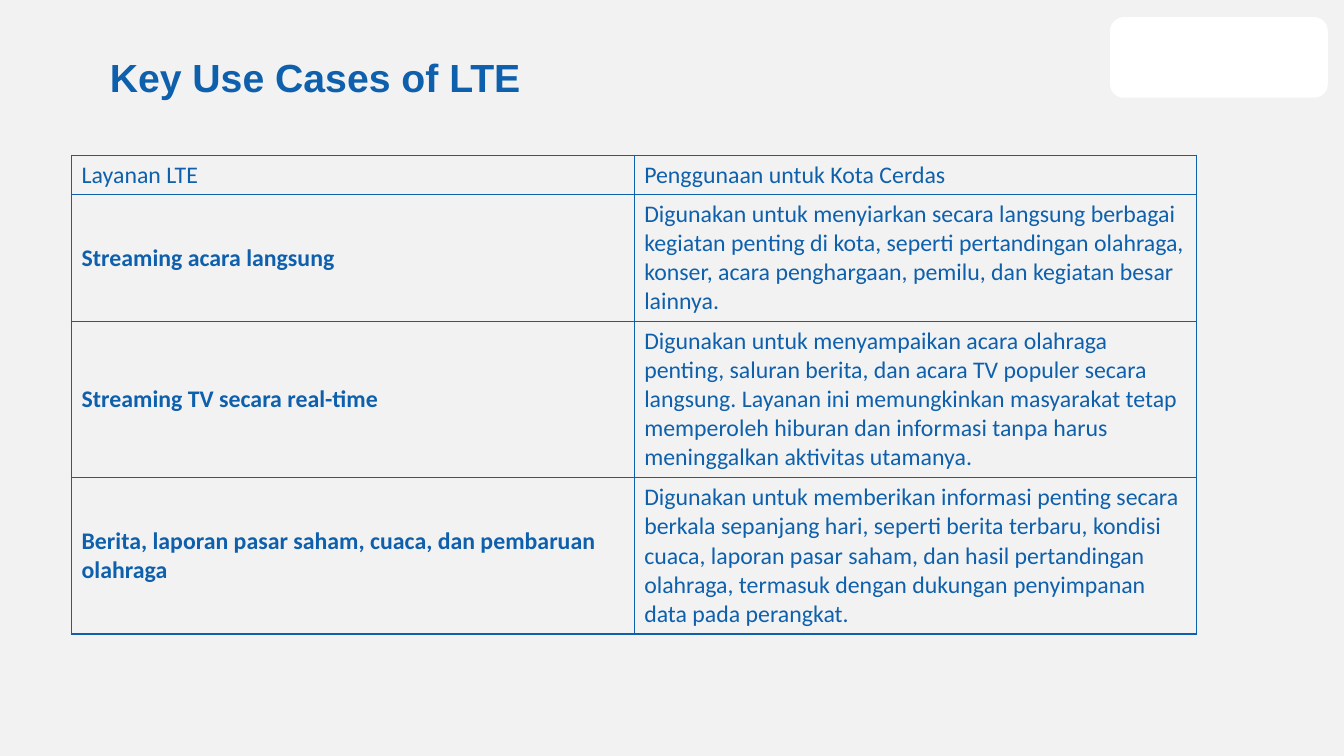
from lxml import etree
from pptx import Presentation
from pptx.dml.color import RGBColor
from pptx.enum.shapes import MSO_SHAPE
from pptx.enum.text import MSO_ANCHOR
from pptx.oxml.ns import qn
from pptx.util import Inches, Pt

RECT = MSO_SHAPE.RECTANGLE
ROUNDED = MSO_SHAPE.ROUNDED_RECTANGLE
TOP = MSO_ANCHOR.TOP
MIDDLE = MSO_ANCHOR.MIDDLE

BLUE = "0E60AC"
GREY = "F2F2F2"
WHITE = "FFFFFF"

COLUMN_WIDTH = 5.58
ROW_HEIGHTS = [0.39, 1.26, 1.55, 1.55]
USE_CASES = [
    ("Layanan LTE", "Penggunaan untuk Kota Cerdas"),
    ("Streaming acara langsung",
     "Digunakan untuk menyiarkan secara langsung berbagai kegiatan penting di "
     "kota, seperti pertandingan olahraga, konser, acara penghargaan, pemilu, "
     "dan kegiatan besar lainnya."),
    ("Streaming TV secara real-time",
     "Digunakan untuk menyampaikan acara olahraga penting, saluran berita, dan "
     "acara TV populer secara langsung. Layanan ini memungkinkan masyarakat "
     "tetap memperoleh hiburan dan informasi tanpa harus meninggalkan "
     "aktivitas utamanya."),
    ("Berita, laporan pasar saham, cuaca, dan pembaruan olahraga",
     "Digunakan untuk memberikan informasi penting secara berkala sepanjang "
     "hari, seperti berita terbaru, kondisi cuaca, laporan pasar saham, dan "
     "hasil pertandingan olahraga, termasuk dengan dukungan penyimpanan data "
     "pada perangkat."),
]


def rgb(color):
    return RGBColor.from_string(color)


def add_panel(s, kind, left, top, width, height, color):
    sp = s.shapes.add_shape(kind, Inches(left), Inches(top),
                            Inches(width), Inches(height))
    sp.shadow.inherit = False
    sp.fill.solid()
    sp.fill.fore_color.rgb = rgb(color)
    sp.line.fill.background()
    return sp


def format_text(p, font, size, bold):
    for r in p.runs:
        r.font.name = font
        r.font.size = Pt(size)
        r.font.bold = bold
        r.font.color.rgb = rgb(BLUE)


def add_title(s, text):
    sp = s.shapes.add_textbox(Inches(0.99), Inches(0.53),
                              Inches(10.18), Inches(0.71))
    tf = sp.text_frame
    tf.word_wrap = True
    tf.vertical_anchor = TOP
    tf.text = text
    p = tf.paragraphs[0]
    p.line_spacing = 0.9
    format_text(p, "Arial", 28, True)


def set_borders(cell, color, width):
    # Border lines come before the fill in the cell properties
    tc_pr = cell._tc.get_or_add_tcPr()
    for i, side in enumerate(("lnL", "lnR", "lnT", "lnB")):
        ln = etree.Element(qn(f"a:{side}"), w=str(Pt(width)))
        fill = etree.SubElement(ln, qn("a:solidFill"))
        etree.SubElement(fill, qn("a:srgbClr"), val=color)
        tc_pr.insert(i, ln)


def add_use_case_table(s):
    frame = s.shapes.add_table(len(USE_CASES), 2, Inches(0.71), Inches(1.54),
                               Inches(2 * COLUMN_WIDTH),
                               Inches(sum(ROW_HEIGHTS)))
    table = frame.table
    table.first_row = False
    table.horz_banding = False
    for column in table.columns:
        column.width = Inches(COLUMN_WIDTH)
    for i, (height, texts) in enumerate(zip(ROW_HEIGHTS, USE_CASES)):
        table.rows[i].height = Inches(height)
        for j, text in enumerate(texts):
            cell = table.cell(i, j)
            cell.text = text
            cell.vertical_anchor = MIDDLE
            cell.fill.background()
            set_borders(cell, BLUE, 1)
            # Service names below the header are bold
            format_text(cell.text_frame.paragraphs[0], "Calibri", 17,
                        i > 0 and j == 0)


def main():
    prs = Presentation()
    prs.slide_width = Inches(13.33)
    prs.slide_height = Inches(7.5)
    s = prs.slides.add_slide(prs.slide_layouts[6])

    # Backdrop and corner panel
    add_panel(s, RECT, 0, 0, 13.33, 7.5, GREY)
    corner = add_panel(s, ROUNDED, 11.01, 0.17, 2.16, 0.8, WHITE)
    corner.adjustments[0] = 0.17

    # Content
    add_title(s, "Key Use Cases of LTE")
    add_use_case_table(s)

    prs.save("out.pptx")


if __name__ == "__main__":
    main()
